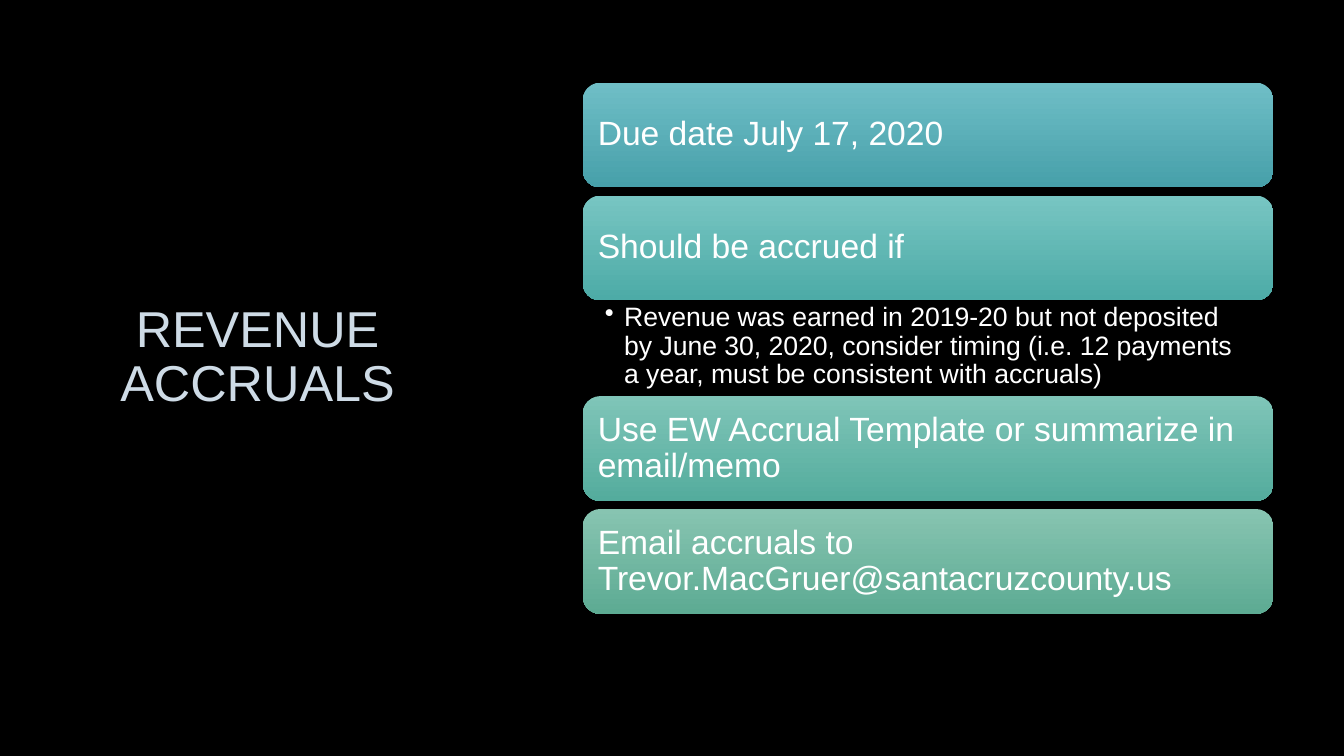
"""Build the Revenue Accruals slide: a title beside a stack of four gradient cards."""
from lxml import etree
from pptx import Presentation
from pptx import util as u
from pptx.dml.color import RGBColor
from pptx.enum import shapes, text
from pptx.oxml.ns import qn

THEME = {
    "font": "Arial",
    "background": "000000",
    "title": {"size": 36, "color": "CEDBE6"},
    "card": {"size": 24, "color": "FFFFFF"},
    "detail": {"size": 19, "color": "FFFFFF"},
}
LEFT, WIDTH, CARD_H, GAP, DETAIL_H = 5.78, 6.85, 1.04, 0.08, 0.95
CARDS = [
    ("Due date July 17, 2020", "6FBEC6", "47A0AA", None),
    ("Should be accrued if", "77C5C2", "4DABA7",
     "Revenue was earned in 2019-20 but not deposited by June 30, 2020, consider timing "
     "(i.e. 12 payments a year, must be consistent with accruals)"),
    ("Use EW Accrual Template or summarize in email/memo", "7FC5B8", "54AC9D", None),
    ("Email accruals to Trevor.MacGruer@santacruzcounty.us", "87C4B1", "5DAB93", None),
]


def write(sp, words, style, align, anchor, insets):
    """Fill a shape with one styled paragraph and return it."""
    tf = sp.text_frame
    frame = {"word_wrap": True, "auto_size": text.MSO_AUTO_SIZE.NONE, "vertical_anchor": anchor}
    for side, inset in zip(("left", "top", "right", "bottom"), insets):
        frame[f"margin_{side}"] = u.Inches(inset)
    for name, value in frame.items():
        setattr(tf, name, value)
    p = tf.paragraphs[0]
    p.alignment, p.line_spacing = align, 0.9
    r = p.add_run()
    r.text = words
    for name, value in {"name": THEME["font"], "size": u.Pt(THEME[style]["size"])}.items():
        setattr(r.font, name, value)
    r.font.color.rgb = RGBColor.from_string(THEME[style]["color"])
    return p


prs = Presentation()
prs.slide_width, prs.slide_height = u.Inches(13.33), u.Inches(7.5)
s = prs.slides.add_slide(prs.slide_layouts[5])
s.background.fill.solid()
s.background.fill.fore_color.rgb = RGBColor.from_string(THEME["background"])

title = s.shapes.title
for name, value in {"left": 0.69, "top": 0.67, "width": 3.73, "height": 5.77}.items():
    setattr(title, name, u.Inches(value))
write(title, "REVENUE ACCRUALS", "title", text.PP_ALIGN.CENTER, text.MSO_ANCHOR.MIDDLE,
      (0.1, 0.05, 0.1, 0.05))

top = 0.82
for words, light, dark, detail in CARDS:
    sp = s.shapes.add_shape(shapes.MSO_SHAPE.ROUNDED_RECTANGLE, u.Inches(LEFT), u.Inches(top),
                            u.Inches(WIDTH), u.Inches(CARD_H))
    sp.shadow.inherit = False
    sp.line.fill.background()
    sp.fill.gradient()
    sp.fill.gradient_angle = 270
    for stop, color, position in zip(sp.fill.gradient_stops, (light, dark), (0, 1)):
        stop.color.rgb = RGBColor.from_string(color)
        stop.position = position
    write(sp, words, "card", text.PP_ALIGN.LEFT, text.MSO_ANCHOR.MIDDLE, (0.1,) * 4)
    top += CARD_H
    if detail:
        box = s.shapes.add_textbox(u.Inches(LEFT), u.Inches(top), u.Inches(WIDTH), u.Inches(DETAIL_H))
        p = write(box, detail, "detail", text.PP_ALIGN.LEFT, text.MSO_ANCHOR.TOP,
                  (0.22, 0.03, 0.19, 0.03))
        pPr = p._p.get_or_add_pPr()
        pPr.set("marL", str(u.Inches(0.19)))
        pPr.set("indent", str(-u.Inches(0.19)))
        etree.SubElement(pPr, qn("a:buChar"), char="•")
        top += DETAIL_H
    else:
        top += GAP

prs.save("out.pptx")
